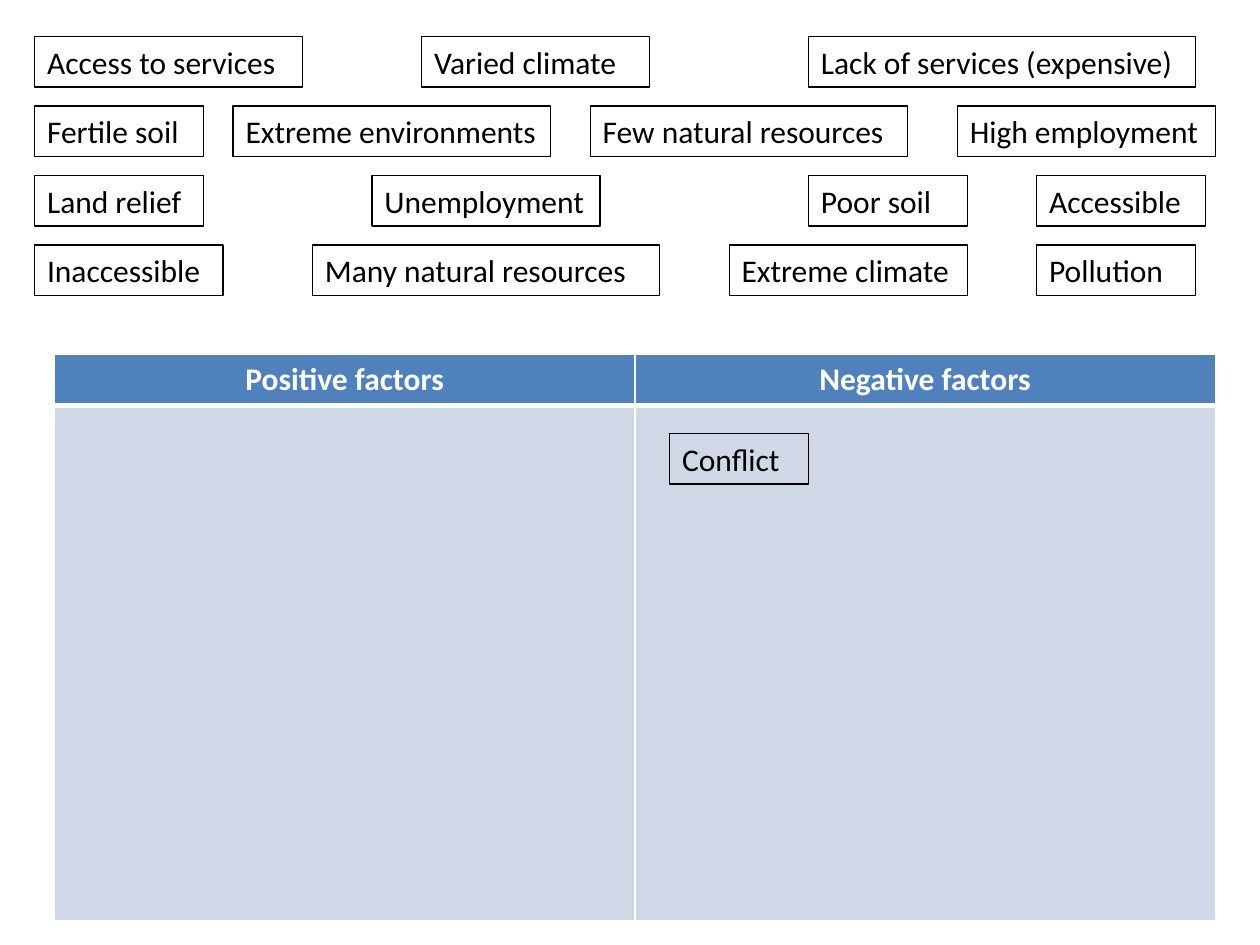
from dataclasses import dataclass

from lxml.etree import SubElement
from pptx import Presentation
from pptx.dml.color import RGBColor as Rgb
from pptx.enum.shapes import MSO_SHAPE as Shape
from pptx.enum.text import MSO_ANCHOR as Anchor, MSO_AUTO_SIZE as AutoSize, PP_ALIGN as Align
from pptx.oxml.ns import qn
from pptx.util import Inches, Mm, Pt


@dataclass(frozen=True)
class Theme:
    font: str = "Calibri"
    size: float = 18
    ink: str = "000000"
    paper: str = "FFFFFF"
    header: str = "4F81BD"
    body: str = "D0D8E8"
    outline: float = 0.75
    rule: float = 1
    header_rule: float = 3


@dataclass(frozen=True)
class Factor:
    text: str
    column: int
    span: int


THEME = Theme()
UNIT = Mm(2)
LEFT, TOP = Mm(7), Mm(7.4)
ROW_STEP = 7
CARD_HEIGHT = Inches(0.4)
TABLE_COLUMN, TABLE_ROW, TABLE_SPAN, BODY_SPAN = 2, 32, 117, 52

FACTOR_ROWS = [
    [Factor("Access to services", 0, 27), Factor("Varied climate", 39, 23),
     Factor("Lack of services (expensive)", 78, 39)],
    [Factor("Fertile soil", 0, 17), Factor("Extreme environments", 20, 32),
     Factor("Few natural resources", 56, 32), Factor("High employment", 93, 26)],
    [Factor("Land relief", 0, 17), Factor("Unemployment", 34, 23),
     Factor("Poor soil", 78, 16), Factor("Accessible", 101, 17)],
    [Factor("Inaccessible", 0, 19), Factor("Many natural resources", 28, 35),
     Factor("Extreme climate", 70, 24), Factor("Pollution", 101, 16)],
]
SORTED_FACTOR, SORTED_ROW = Factor("Conflict", 64, 14), 40
HEADINGS = ["Positive factors", "Negative factors"]


def write(frame, text: str, color: str, align: Align, bold: bool = False) -> None:
    paragraph = frame.paragraphs[0]
    paragraph.text = text
    paragraph.alignment = align
    font = paragraph.font
    font.name, font.size, font.bold = THEME.font, Pt(THEME.size), bold
    font.color.rgb = Rgb.from_string(color)


def add_factor(slide, factor: Factor, row: int) -> None:
    card = slide.shapes.add_shape(
        Shape.RECTANGLE, LEFT + factor.column * UNIT, TOP + row * UNIT,
        factor.span * UNIT, CARD_HEIGHT)
    card.shadow.inherit = False
    card.fill.background()
    card.line.color.rgb = Rgb.from_string(THEME.ink)
    card.line.width = Pt(THEME.outline)
    frame = card.text_frame
    frame.word_wrap = True
    frame.auto_size = AutoSize.SHAPE_TO_FIT_TEXT
    frame.vertical_anchor = Anchor.TOP
    write(frame, factor.text, THEME.ink, Align.LEFT)


def style_cell(cell, fill: str, bottom: float) -> None:
    properties = cell._tc.get_or_add_tcPr()
    for side in "LRTB":
        width = bottom if side == "B" else THEME.rule
        border = SubElement(properties, qn(f"a:ln{side}"), w=str(Pt(width)))
        SubElement(SubElement(border, qn("a:solidFill")), qn("a:srgbClr"), val=THEME.paper)
    cell.fill.solid()
    cell.fill.fore_color.rgb = Rgb.from_string(fill)


def add_sorting_table(slide) -> None:
    body_height = BODY_SPAN * UNIT
    table = slide.shapes.add_table(
        2, len(HEADINGS), LEFT + TABLE_COLUMN * UNIT, TOP + TABLE_ROW * UNIT,
        TABLE_SPAN * UNIT, CARD_HEIGHT + body_height).table
    table.rows[0].height, table.rows[1].height = CARD_HEIGHT, body_height
    for column, heading in enumerate(HEADINGS):
        header, body = table.cell(0, column), table.cell(1, column)
        style_cell(header, THEME.header, THEME.header_rule)
        style_cell(body, THEME.body, THEME.rule)
        write(header.text_frame, heading, THEME.paper, Align.CENTER, bold=True)


def main() -> None:
    deck = Presentation()
    deck.slide_width, deck.slide_height = Inches(10), Inches(7.5)
    slide = deck.slides.add_slide(deck.slide_layouts[6])
    add_sorting_table(slide)
    for index, factors in enumerate(FACTOR_ROWS):
        for factor in factors:
            add_factor(slide, factor, index * ROW_STEP)
    add_factor(slide, SORTED_FACTOR, SORTED_ROW)
    deck.save("out.pptx")


if __name__ == "__main__":
    main()
